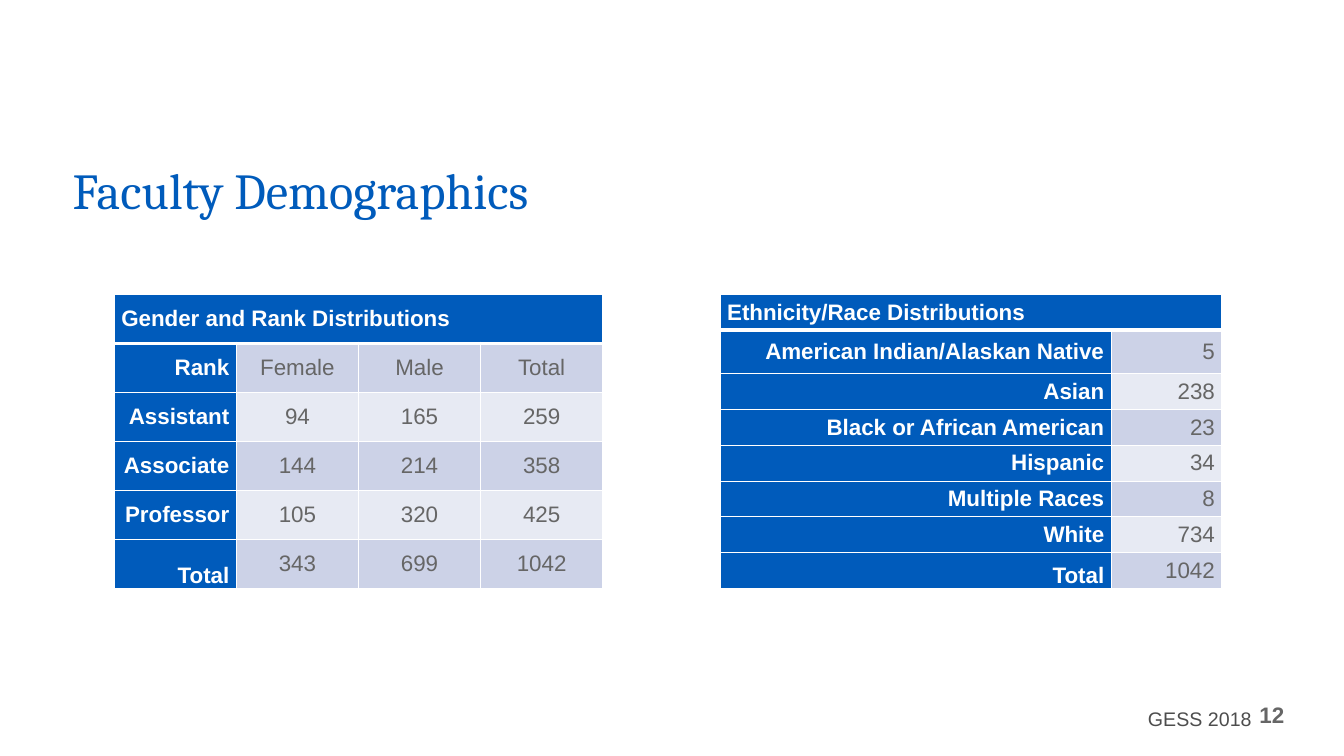
from dataclasses import dataclass

from lxml import etree
from pptx import Presentation
from pptx import util as u
from pptx.dml.color import RGBColor
from pptx.enum import text
from pptx.oxml import ns

Pt = u.Pt


@dataclass(frozen=True)
class Theme:
    blue: str = "005BBB"
    white: str = "FFFFFF"
    gray: str = "666666"
    dark_gray: str = "4D4D4D"
    bands: tuple = ("CCD2E7", "E7EAF3")
    heading_font: str = "Cambria"
    body_font: str = "Arial"
    title_size: int = 36
    body_size: int = 16
    footer_size: int = 14


THEME = Theme()
LEFT, CENTER, RIGHT = text.PP_ALIGN.LEFT, text.PP_ALIGN.CENTER, text.PP_ALIGN.RIGHT
MIDDLE, BOTTOM = text.MSO_ANCHOR.MIDDLE, text.MSO_ANCHOR.BOTTOM

GENDER_ROWS = [
    ("Rank", "Female", "Male", "Total"),
    ("Assistant", "94", "165", "259"),
    ("Associate", "144", "214", "358"),
    ("Professor", "105", "320", "425"),
    ("Total", "343", "699", "1042"),
]
RACE_ROWS = [
    ("American Indian/Alaskan Native", "5"),
    ("Asian", "238"),
    ("Black or African American", "23"),
    ("Hispanic", "34"),
    ("Multiple Races", "8"),
    ("White", "734"),
    ("Total", "1042"),
]


def add_run(paragraph, words, size, color, bold=False, font=THEME.body_font):
    run = paragraph.add_run()
    run.text = words
    run.font.size = Pt(size)
    run.font.name = font
    run.font.bold = bold
    run.font.color.rgb = RGBColor.from_string(color)


def add_label(slide, box, words, size, color, anchor, align=LEFT,
              insets=(7.2, 3.6), line_spacing=1.0, **style):
    frame = slide.shapes.add_textbox(*map(Pt, box)).text_frame
    frame.word_wrap = True
    frame.vertical_anchor = anchor
    frame.margin_left = frame.margin_right = Pt(insets[0])
    frame.margin_top = frame.margin_bottom = Pt(insets[1])
    paragraph = frame.paragraphs[0]
    paragraph.alignment = align
    paragraph.line_spacing = line_spacing
    add_run(paragraph, words, size, color, **style)


def set_borders(cell, top, bottom):
    properties = cell._tc.get_or_add_tcPr()
    for side, width in (("L", 1), ("R", 1), ("T", top), ("B", bottom)):
        line = etree.SubElement(properties, ns.qn(f"a:ln{side}"), w=str(Pt(width)))
        fill = etree.SubElement(line, ns.qn("a:solidFill"))
        etree.SubElement(fill, ns.qn("a:srgbClr"), val=THEME.white)


def style_cell(cell, row, fill):
    set_borders(cell, 3 if row == 1 else 1, 3 if row == 0 else 1)
    cell.fill.solid()
    cell.fill.fore_color.rgb = RGBColor.from_string(fill)
    cell.margin_left = cell.margin_right = Pt(5.04)
    cell.margin_top = cell.margin_bottom = 0
    cell.vertical_anchor = MIDDLE


def fill_cell(cell, words, align, color, bold):
    paragraph = cell.text_frame.paragraphs[0]
    paragraph.alignment = align
    add_run(paragraph, words, THEME.body_size, color, bold)


def add_distribution(slide, box, heading, records, widths, heights, value_align):
    frame = slide.shapes.add_table(len(heights), len(widths), *map(Pt, box))
    table = frame.table
    table.first_row = table.horz_banding = False
    for column, width in zip(table.columns, widths):
        column.width = Pt(width)
    for row, height in zip(table.rows, heights):
        row.height = Pt(height)

    for column in range(len(widths)):
        style_cell(table.cell(0, column), 0, THEME.blue)
    table.cell(0, 0).merge(table.cell(0, len(widths) - 1))
    fill_cell(table.cell(0, 0), heading, LEFT, THEME.white, True)

    for row, (name, *values) in enumerate(records, start=1):
        name_cell = table.cell(row, 0)
        style_cell(name_cell, row, THEME.blue)
        fill_cell(name_cell, name, RIGHT, THEME.white, True)
        for column, value in enumerate(values, start=1):
            cell = table.cell(row, column)
            style_cell(cell, row, THEME.bands[(row - 1) % 2])
            fill_cell(cell, value, value_align, THEME.gray, False)
    table.cell(len(records), 0).vertical_anchor = BOTTOM


def add_gender_table(slide, box):
    left, top, width, height = box
    add_distribution(slide, box, "Gender and Rank Distributions", GENDER_ROWS,
                     [width / 4] * 4, [height / 6] * 6, CENTER)


def add_race_table(slide, box):
    left, top, width, height = box
    tall_row, value_width = 31, 79
    row_height = (height - tall_row) / len(RACE_ROWS)
    heights = [row_height, tall_row] + [row_height] * (len(RACE_ROWS) - 1)
    add_distribution(slide, box, "Ethnicity/Race Distributions", RACE_ROWS,
                     [width - value_width, value_width], heights, RIGHT)


def add_title(slide, box):
    add_label(slide, box, "Faculty Demographics", THEME.title_size, THEME.blue,
              BOTTOM, line_spacing=0.8, font=THEME.heading_font)


def add_footer(slide, box):
    left, top, width, height = box
    add_label(slide, (left, top, 92.2, height), "GESS 2018",
              THEME.footer_size, THEME.dark_gray, BOTTOM)
    add_label(slide, (left + width - 56.9, top + 5, 56.9, 41.8), "12",
              THEME.body_size, THEME.gray, MIDDLE, RIGHT, (9.36, 5.04), bold=True)


def main():
    presentation = Presentation()
    presentation.slide_width = Pt(960)
    presentation.slide_height = Pt(540)
    slide = presentation.slides.add_slide(presentation.slide_layouts[6])
    add_title(slide, (44.9, 103.7, 828, 56.2))
    add_gender_table(slide, (81.6, 210.4, 349, 210))
    add_race_table(slide, (514.4, 210.4, 358.4, 210))
    add_footer(slide, (812.9, 484.6, 113.8, 41))
    presentation.save("out.pptx")


if __name__ == "__main__":
    main()
